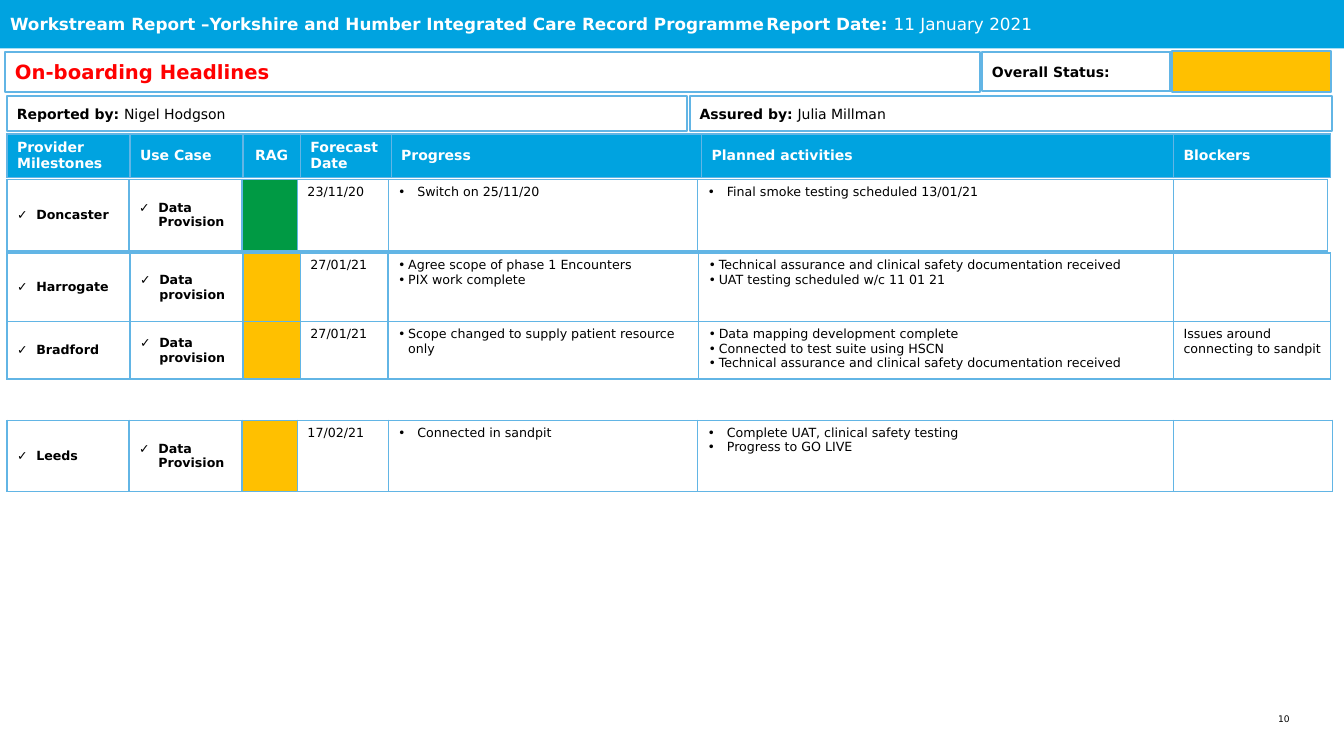
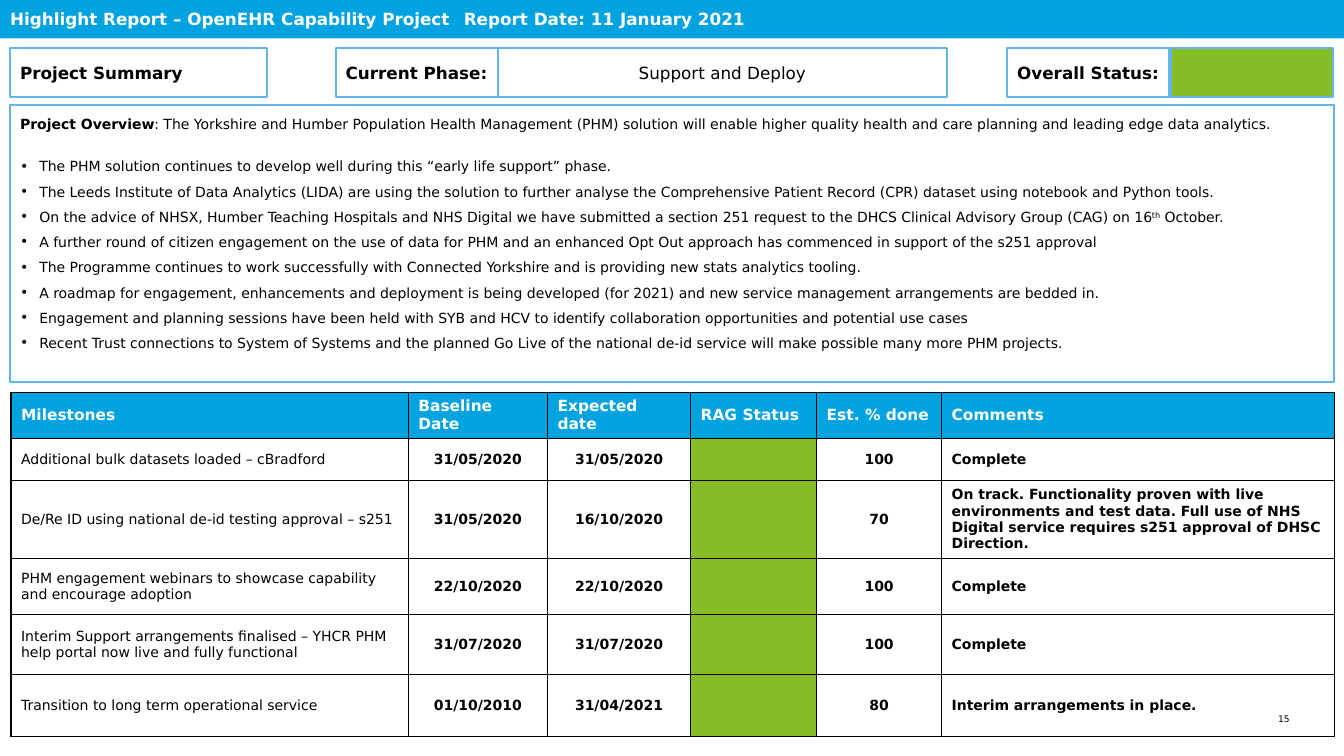
"""Build two programme status report slides."""
import pptx
import pptx.util
import pptx.dml.color
import pptx.enum.shapes
import pptx.enum.text
import pptx.oxml
import pptx.oxml.ns
from lxml import etree

Inches = pptx.util.Inches
Pt = pptx.util.Pt
ALIGN = pptx.enum.text.PP_ALIGN
ANCHOR = pptx.enum.text.MSO_ANCHOR

FONT = "DejaVu Sans"
COLORS = {
    "band": "00A3E0",
    "edge": "62B5E5",
    "ink": "000000",
    "paper": "FFFFFF",
    "alert": "FF0000",
    "amber": "FFC000",
    "green": "009A44",
    "lime": "86BC25",
}
WIDTH = 13.33


def rgb(name):
    """Return the named colour."""
    return pptx.dml.color.RGBColor.from_string(COLORS[name])


def add_child(parent, tag, **attributes):
    """Append a drawing element and return it."""
    child = etree.SubElement(parent, pptx.oxml.ns.qn(tag))
    for key, value in attributes.items():
        child.set(key, str(value))
    return child


def write(para, text, size=10, bold=False, color="ink", align=ALIGN.LEFT,
          bullet=None, indent=0, tab=None, spacing=1.0, after=0):
    """Write text, or a list of (text, span format) pairs, into a paragraph."""
    props = para._p.get_or_add_pPr()
    props.set("marL", str(Inches(indent)))
    props.set("indent", str(-Inches(indent)))
    if bullet:
        add_child(props, "a:buFont", typeface=FONT)
        add_child(props, "a:buChar", char=bullet)
    else:
        add_child(props, "a:buNone")
    if tab:
        stops = add_child(props, "a:tabLst")
        add_child(stops, "a:tab", pos=Inches(tab), algn="l")
    para.alignment = align
    para.line_spacing = spacing
    para.space_before = Pt(0)
    para.space_after = Pt(after)
    for words, changes in [(text, {})] if isinstance(text, str) else text:
        span = para.add_run()
        span.text = words
        span.font.name = FONT
        span.font.size = Pt(size)
        span.font.bold = changes.get("bold", bold)
        span.font.color.rgb = rgb(color)
        if changes.get("raised"):
            span._r.get_or_add_rPr().set("baseline", "30000")


def write_lines(frame, lines, **style):
    """Write each line as one paragraph of a text frame."""
    for number, line in enumerate(lines):
        para = frame.add_paragraph() if number else frame.paragraphs[0]
        write(para, line, **style)


def place(box, left, top, width, height):
    """Move and size a box."""
    box.left, box.top = Inches(left), Inches(top)
    box.width, box.height = Inches(width), Inches(height)


def add_band(page, height, text, tab):
    """Turn the title placeholder into the coloured band."""
    box = page.shapes.title
    place(box, 0, 0, WIDTH, height)
    box.fill.solid()
    box.fill.fore_color.rgb = rgb("band")
    frame = box.text_frame
    frame.auto_size = pptx.enum.text.MSO_AUTO_SIZE.NONE
    frame.vertical_anchor = ANCHOR.MIDDLE
    write(frame.paragraphs[0], text, size=12, bold=True, color="paper", tab=tab)


def add_page_number(page, number):
    """Add the small number in the bottom right corner."""
    box = page.shapes.add_textbox(Inches(12.45), Inches(7.08), Inches(0.34), Inches(0.11))
    frame = box.text_frame
    frame.word_wrap = True
    frame.margin_left = frame.margin_right = frame.margin_top = frame.margin_bottom = 0
    write(frame.paragraphs[0], str(number), size=6.5, align=ALIGN.RIGHT)


def add_panel(page, at, text=None, fill="paper", **style):
    """Add an outlined rectangle with optional text."""
    box = page.shapes.add_shape(pptx.enum.shapes.MSO_SHAPE.RECTANGLE,
                                *[Inches(length) for length in at])
    box.shadow.inherit = False
    box.fill.solid()
    box.fill.fore_color.rgb = rgb(fill)
    box.line.color.rgb = rgb("edge")
    box.line.width = Pt(1.5)
    if text:
        box.text_frame.vertical_anchor = ANCHOR.MIDDLE
        write(box.text_frame.paragraphs[0], text, **style)


def add_overview(page, at, intro, points):
    """Fill the outlined body placeholder with an introduction and bullets."""
    box = page.placeholders[1]
    place(box, *at)
    box.line.color.rgb = rgb("edge")
    box.line.width = Pt(1.5)
    frame = box.text_frame
    frame.auto_size = pptx.enum.text.MSO_AUTO_SIZE.NONE
    frame.vertical_anchor = ANCHOR.TOP
    frame.margin_top = Inches(0.11)
    write(frame.paragraphs[0], intro, after=12)
    for point in points:
        write(frame.add_paragraph(), point, bullet="•", indent=0.19, spacing=1.5)


def cell(*lines, fill=None, anchor=ANCHOR.MIDDLE, **style):
    """Describe one table cell."""
    return {"lines": lines, "fill": fill, "anchor": anchor, "style": style}


def head(text, **style):
    """Describe a header cell."""
    return cell(text, fill="band", bold=True, color="paper", **style)


def provider_row(provider, use_case, status, date, progress, plans, blockers=(), indent=0.19):
    """Describe the cells of one provider."""
    check = {"size": 9, "bold": True, "bullet": "✓", "indent": 0.19}
    plain = {"size": 9, "anchor": ANCHOR.TOP}
    points = {**plain, "bullet": "•", "indent": indent}
    return [cell(provider, **check), cell(use_case, **check), cell(fill=status),
            cell(date, **plain), cell(*progress, **points), cell(*plans, **points),
            cell(*blockers, **plain)]


def milestone_row(milestone, baseline, expected, done, comment):
    """Describe the cells of one milestone."""
    centred = {"bold": True, "align": ALIGN.CENTER}
    return [cell(milestone), cell(baseline, **centred), cell(expected, **centred),
            cell(fill="lime"), cell(done, **centred), cell(comment, bold=True)]


def draw_borders(target, color):
    """Draw all four borders of a table cell."""
    props = target._tc.get_or_add_tcPr()
    for side in ("a:lnL", "a:lnR", "a:lnT", "a:lnB"):
        line = add_child(props, side, w=Pt(1))
        add_child(add_child(line, "a:solidFill"), "a:srgbClr", val=COLORS[color])


def add_grid(page, left, top, widths, heights, rows, border="edge"):
    """Add a table of described cells."""
    grid = page.shapes.add_table(len(rows), len(widths), Inches(left), Inches(top),
                                 Inches(sum(widths)), Inches(sum(heights))).table
    grid.first_row = grid.horz_banding = False
    for column, width in zip(grid.columns, widths):
        column.width = Inches(width)
    for row, height in zip(grid.rows, heights):
        row.height = Inches(height)
    for row, described in zip(grid.rows, rows):
        for target, content in zip(row.cells, described):
            draw_borders(target, border)
            if content["fill"]:
                target.fill.solid()
                target.fill.fore_color.rgb = rgb(content["fill"])
            else:
                target.fill.background()
            target.vertical_anchor = content["anchor"]
            write_lines(target.text_frame, content["lines"], **content["style"])


def build_onboarding(deck):
    """Build the on-boarding workstream page."""
    page = deck.slides.add_slide(deck.slide_layouts[5])
    add_band(page, 0.48, [
        ("Workstream Report –Yorkshire and Humber Integrated Care Record Programme\tReport Date: ", {}),
        ("11 January 2021", {"bold": False})], tab=8.5)
    add_page_number(page, 10)
    add_panel(page, (0.05, 0.52, 9.67, 0.39), "On-boarding Headlines",
              size=14, bold=True, color="alert")
    add_panel(page, (9.74, 0.52, 1.87, 0.38), "Overall Status:", bold=True)
    add_panel(page, (11.62, 0.51, 1.58, 0.4), fill="amber")
    for left, width, role, person in ((0.07, 6.74, "Reported by: ", "Nigel Hodgson"),
                                      (6.84, 6.37, "Assured by: ", "Julia Millman")):
        add_panel(page, (left, 0.95, width, 0.35), [(role, {"bold": True}), (person, {})])

    add_grid(page, 0.07, 1.33, [1.22, 1.12, 0.57, 0.9, 3.08, 4.68, 1.56], [0.43], [
        [head("Provider Milestones"), head("Use Case"), head("RAG", align=ALIGN.CENTER),
         head("Forecast Date"), head("Progress"), head("Planned activities"), head("Blockers")]])
    single = [1.21, 1.12, 0.55, 0.9, 3.07, 4.72]
    add_grid(page, 0.07, 1.78, single + [1.53], [0.71], [
        provider_row("Doncaster", "Data Provision", "green", "23/11/20",
                     ["Switch on 25/11/20"], ["Final smoke testing scheduled 13/01/21"])])
    assured = "Technical assurance and clinical safety documentation received"
    add_grid(page, 0.07, 2.51, [1.22, 1.12, 0.57, 0.87, 3.08, 4.71, 1.56], [0.68, 0.57], [
        provider_row("Harrogate", "Data provision", "amber", "27/01/21",
                     ["Agree scope of phase 1 Encounters", "PIX work complete"],
                     [assured, "UAT testing scheduled w/c 11 01 21"], indent=0.1),
        provider_row("Bradford", "Data provision", "amber", "27/01/21",
                     ["Scope changed to supply patient resource only"],
                     ["Data mapping development complete",
                      "Connected to test suite using HSCN", assured],
                     ["Issues around connecting to sandpit"], indent=0.1)])
    add_grid(page, 0.07, 4.17, single + [1.58], [0.71], [
        provider_row("Leeds", "Data Provision", "amber", "17/02/21", ["Connected in sandpit"],
                     ["Complete UAT, clinical safety testing", "Progress to GO LIVE"])])


def build_capability(deck):
    """Build the capability project page."""
    page = deck.slides.add_slide(deck.slide_layouts[1])
    add_band(page, 0.38, "Highlight Report – OpenEHR Capability Project\tReport Date: 11 January 2021",
             tab=9)
    for left, width, label in ((0.1, 2.55, "Project Summary"), (3.33, 1.61, "Current Phase:"),
                               (9.99, 1.61, "Overall Status:")):
        add_panel(page, (left, 0.48, width, 0.48), label, size=12, bold=True)
    add_panel(page, (4.94, 0.48, 4.45, 0.48), "Support and Deploy", size=12, align=ALIGN.CENTER)
    add_panel(page, (11.61, 0.48, 1.61, 0.48), fill="lime")

    add_overview(page, (0.1, 1.04, 13.13, 2.75), [
        ("Project Overview", {"bold": True}),
        (": The Yorkshire and Humber Population Health Management (PHM) solution will enable higher quality health and care planning and leading edge data analytics.", {})], [
        "The PHM solution continues to develop well during this “early life support” phase.",
        "The Leeds Institute of Data Analytics (LIDA) are using the solution to further analyse the Comprehensive Patient Record (CPR) dataset using notebook and Python tools.",
        [("On the advice of NHSX, Humber Teaching Hospitals and NHS Digital we have submitted a section 251 request to the DHCS Clinical Advisory Group (CAG) on 16", {}),
         ("th", {"raised": True}), (" October.", {})],
        "A further round of citizen engagement on the use of data for PHM and an enhanced Opt Out approach has commenced in support of the s251 approval",
        "The Programme continues to work successfully with Connected Yorkshire and is providing new stats analytics tooling.",
        "A roadmap for engagement, enhancements and deployment is being developed (for 2021) and new service management arrangements are bedded in.",
        "Engagement and planning sessions have been held with SYB and HCV to identify collaboration opportunities and potential use cases",
        "Recent Trust connections to System of Systems and the planned Go Live of the national de-id service will make possible many more PHM projects."])

    titles = ("Milestones", "Baseline Date", "Expected date", "RAG Status", "Est. % done", "Comments")
    add_grid(page, 0.11, 3.89, [3.94, 1.38, 1.42, 1.25, 1.24, 3.9],
             [0.46, 0.42, 0.77, 0.56, 0.59, 0.62], [
        [head(title, size=11) for title in titles],
        milestone_row("Additional bulk datasets loaded – cBradford",
                      "31/05/2020", "31/05/2020", "100", "Complete"),
        milestone_row("De/Re ID using national de-id testing approval – s251",
                      "31/05/2020", "16/10/2020", "70",
                      "On track. Functionality proven with live environments and test data. Full use of NHS Digital service requires s251 approval of DHSC Direction."),
        milestone_row("PHM engagement webinars to showcase capability and encourage adoption",
                      "22/10/2020", "22/10/2020", "100", "Complete"),
        milestone_row("Interim Support arrangements finalised – YHCR PHM help portal now live and fully functional",
                      "31/07/2020", "31/07/2020", "100", "Complete"),
        milestone_row("Transition to long term operational service",
                      "01/10/2010", "31/04/2021", "80", "Interim arrangements in place.")],
             border="ink")
    add_page_number(page, 15)


def main():
    """Build and save the deck."""
    deck = pptx.Presentation()
    deck.slide_width, deck.slide_height = Inches(WIDTH), Inches(7.5)
    build_onboarding(deck)
    build_capability(deck)
    deck.save("out.pptx")


if __name__ == "__main__":
    main()
